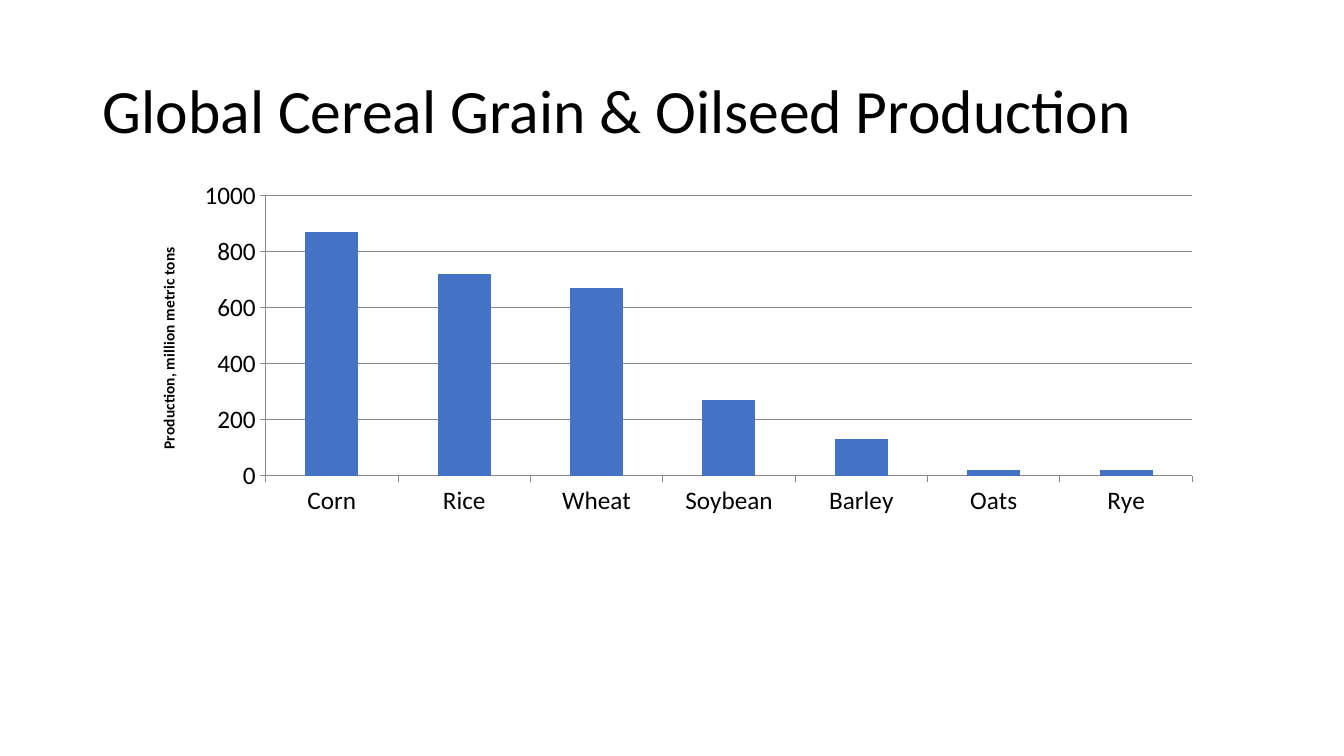
from lxml import etree
from pptx import Presentation
from pptx.chart.data import CategoryChartData
from pptx.dml.color import RGBColor
from pptx.enum.chart import XL_CHART_TYPE, XL_TICK_MARK
from pptx.enum.text import MSO_ANCHOR, PP_ALIGN
from pptx.oxml.ns import qn
from pptx.util import Inches, Pt

COLUMN_CLUSTERED = XL_CHART_TYPE.COLUMN_CLUSTERED
TICK_OUTSIDE = XL_TICK_MARK.OUTSIDE
TICK_NONE = XL_TICK_MARK.NONE
MIDDLE = MSO_ANCHOR.MIDDLE
LEFT = PP_ALIGN.LEFT
FONT = "Calibri"
BLACK = "000000"
BLUE = "4472C4"
GRAY = "878787"

PRODUCTION = {
    "Corn": 870,
    "Rice": 720,
    "Wheat": 670,
    "Soybean": 270,
    "Barley": 130,
    "Oats": 20,
    "Rye": 20,
}


def color(value):
    return RGBColor.from_string(value)


def style_font(font, size, bold=False):
    font.name = FONT
    font.size = Pt(size)
    font.bold = bold
    font.color.rgb = color(BLACK)


presentation = Presentation()
presentation.slide_width = Inches(13.33)
presentation.slide_height = Inches(7.5)
slide = presentation.slides.add_slide(presentation.slide_layouts[5])

title = slide.shapes.title
title.left, title.top = Inches(0.92), Inches(0.4)
title.width, title.height = Inches(11.5), Inches(1.45)
title.text_frame.vertical_anchor = MIDDLE
title.text_frame.word_wrap = True
paragraph = title.text_frame.paragraphs[0]
paragraph.alignment = LEFT
paragraph.line_spacing = 0.9
run = paragraph.add_run()
run.text = "Global Cereal Grain & Oilseed Production"
style_font(run.font, 44)

chart_data = CategoryChartData()
chart_data.categories = list(PRODUCTION)
chart_data.add_series("Series 1", list(PRODUCTION.values()))
chart = slide.shapes.add_chart(
    COLUMN_CLUSTERED, Inches(1.43), Inches(1.79), Inches(10.48), Inches(3.55), chart_data
).chart
chart.has_legend = False
chart.has_title = False
style_font(chart.font, 18)

plot = chart.plots[0]
plot.gap_width = 150
plot.vary_by_categories = False
production_series = plot.series[0]
production_series.format.fill.solid()
production_series.format.fill.fore_color.rgb = color(BLUE)

value_axis = chart.value_axis
value_axis.minimum_scale = 0
value_axis.maximum_scale = 1000
value_axis.major_unit = 200
value_axis.has_major_gridlines = True
axis_run = value_axis.axis_title.text_frame.paragraphs[0].add_run()
axis_run.text = "Production, million metric tons"
style_font(axis_run.font, 11, True)

for axis in (chart.category_axis, value_axis):
    axis.major_tick_mark = TICK_OUTSIDE
    axis.minor_tick_mark = TICK_NONE
for line in (
    chart.category_axis.format.line,
    value_axis.format.line,
    value_axis.major_gridlines.format.line,
):
    line.color.rgb = color(GRAY)
    line.width = Pt(0.75)

plot_area = chart.element.find(".//" + qn("c:plotArea"))
layout = plot_area.find(qn("c:layout"))
if layout is None:
    layout = etree.Element(qn("c:layout"))
    plot_area.insert(0, layout)
manual_layout = etree.SubElement(layout, qn("c:manualLayout"))
for tag, value in (
    ("layoutTarget", "inner"),
    ("xMode", "edge"),
    ("yMode", "edge"),
    ("x", "0.115"),
    ("y", "0.043"),
    ("w", "0.877"),
    ("h", "0.782"),
):
    etree.SubElement(manual_layout, qn("c:" + tag)).set("val", value)

presentation.save("out.pptx")
